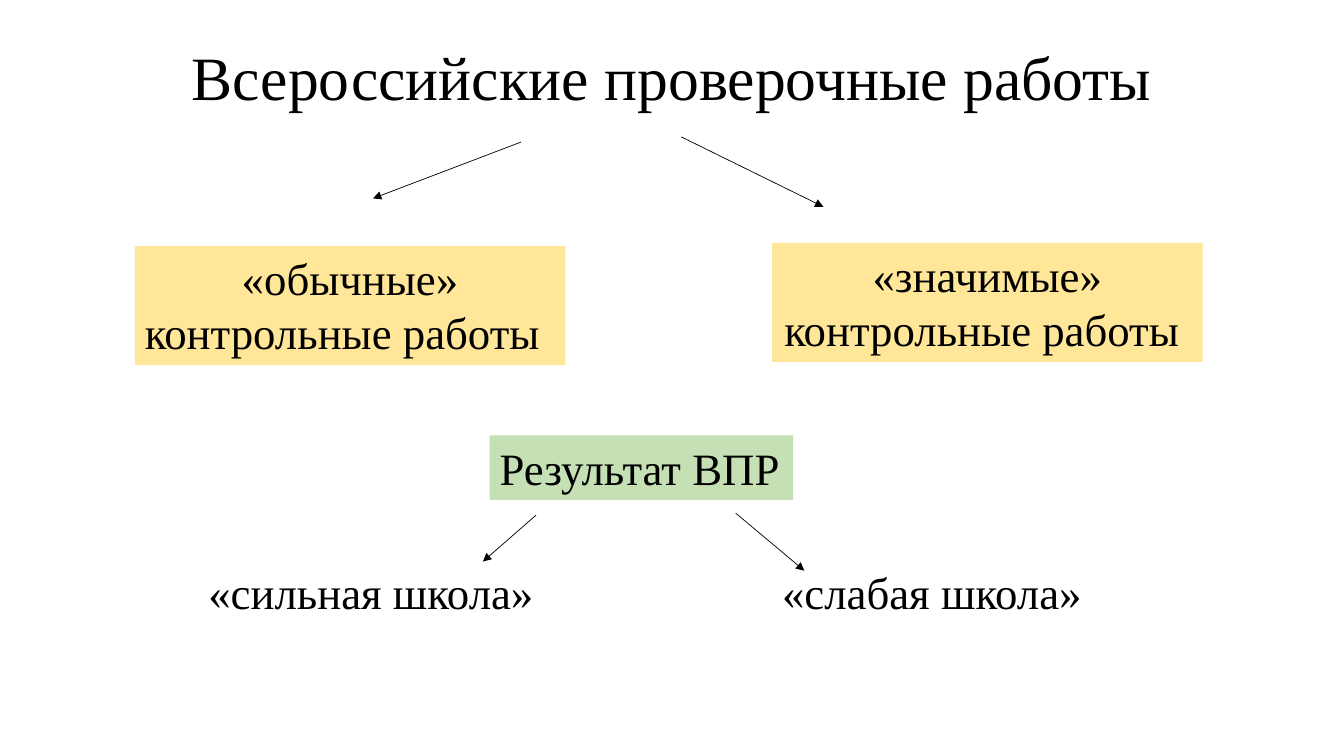
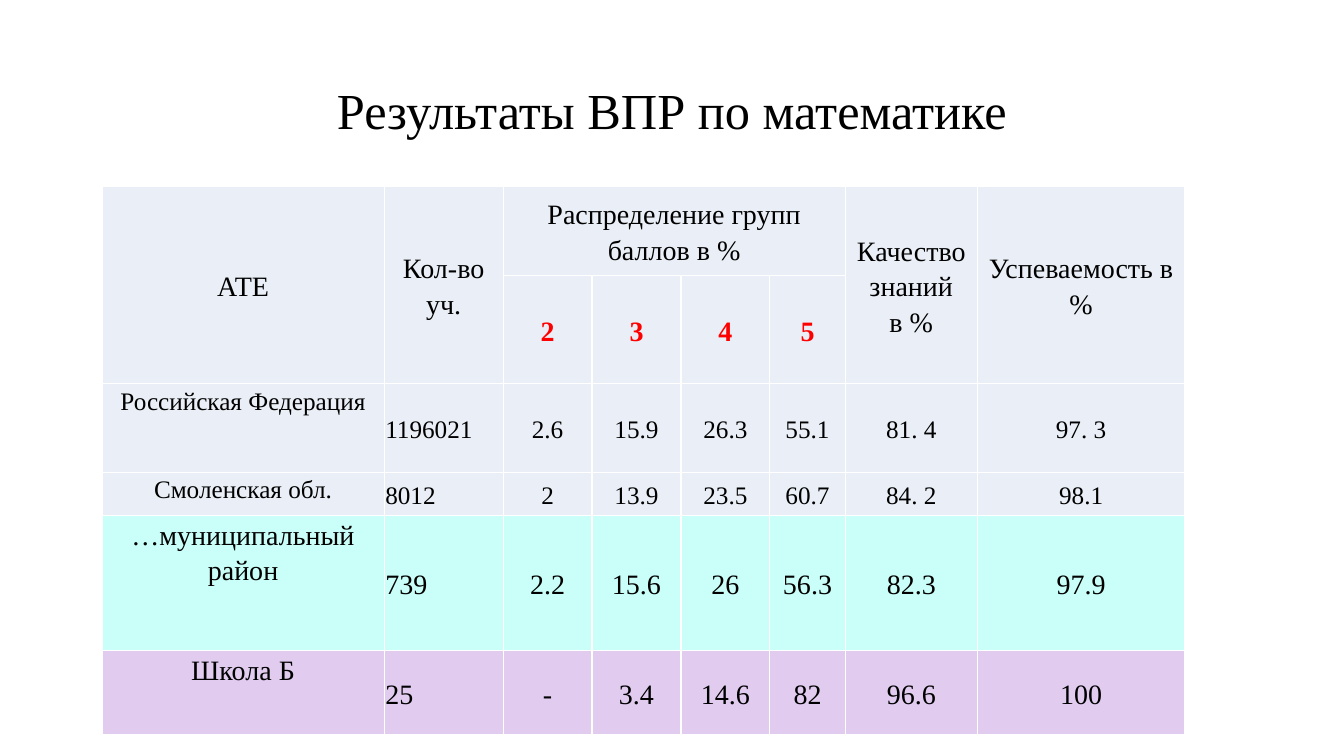
from lxml import etree
from pptx import Presentation
from pptx.dml.color import RGBColor
from pptx.enum.shapes import MSO_CONNECTOR, MSO_SHAPE
from pptx.enum.text import MSO_ANCHOR, PP_ALIGN
from pptx.oxml.ns import qn
from pptx.util import Cm, Pt

LEFT, CENTER = PP_ALIGN.LEFT, PP_ALIGN.CENTER
TOP, MIDDLE = MSO_ANCHOR.TOP, MSO_ANCHOR.MIDDLE
RECTANGLE, STRAIGHT = MSO_SHAPE.RECTANGLE, MSO_CONNECTOR.STRAIGHT

FONT = "Times New Roman"
COLORS = {
    "text": "000000",
    "mark": "FF0000",
    "border": "FFFFFF",
    "yellow": "FFE699",
    "green": "C5E0B4",
    "pale": "EAEFF7",
    "aqua": "CAFEF8",
    "lilac": "E1CCF0",
}

COLUMN_WIDTHS = [7.11, 3, 2.24, 2.24, 2.24, 1.9, 3.33, 5.23]
ROW_HEIGHTS = [2.24, 2.72, 2.24, 1.09, 3.4, 2.13]
# row, column, last row, last column, lines
HEADERS = [
    (0, 0, 1, 0, ["АТЕ"]),
    (0, 1, 1, 1, ["Кол-во уч."]),
    (0, 2, 0, 5, ["Распределение групп баллов в %"]),
    (0, 6, 1, 6, ["Качество знаний", "в %"]),
    (0, 7, 1, 7, ["Успеваемость в %"]),
]
MARKS = ["2", "3", "4", "5"]
# fill, text size, values
RESULTS = [
    ("pale", 18, ["Российская Федерация", "1196021", "2.6", "15.9", "26.3",
                  "55.1", "81. 4", "97. 3"]),
    ("pale", 18, ["Смоленская обл.", "8012", "2", "13.9", "23.5", "60.7",
                  "84. 2", "98.1"]),
    ("aqua", 20, ["…муниципальный район", "739", "2.2", "15.6", "26", "56.3",
                  "82.3", "97.9"]),
    ("lilac", 20, ["Школа Б", "25", "-", "3.4", "14.6", "82", "96.6", "100"]),
]


def rgb(name):
    return RGBColor.from_string(COLORS[name])


def write(tf, lines, size, aligns, color="text", bold=False, spacing=1.0):
    """Fill a text frame with one paragraph per line and alignment."""
    for i, (line, align) in enumerate(zip(lines, aligns)):
        p = tf.paragraphs[0] if i == 0 else tf.add_paragraph()
        p.alignment, p.line_spacing = align, spacing
        r = p.add_run()
        r.text = line
        r.font.name, r.font.size, r.font.bold = FONT, Pt(size), bold
        r.font.color.rgb = rgb(color)


def add_titled_slide(prs, title, size, height):
    s = prs.slides.add_slide(prs.slide_layouts[5])
    sp = s.shapes.title
    sp.left, sp.top, sp.width, sp.height = Cm(2.33), Cm(1.02), Cm(29.21), Cm(height)
    tf = sp.text_frame
    tf.word_wrap, tf.vertical_anchor = True, MIDDLE
    write(tf, [title], size, [CENTER], spacing=0.9)
    return s


def add_label(s, x, y, w, h, lines, aligns=(LEFT,), fill=None):
    """Add a plain text box, or a filled rectangle when fill is given."""
    box = Cm(x), Cm(y), Cm(w), Cm(h)
    if fill:
        sp = s.shapes.add_shape(RECTANGLE, *box)
        sp.shadow.inherit = False
        sp.fill.solid()
        sp.fill.fore_color.rgb = rgb(fill)
        sp.line.fill.background()
    else:
        sp = s.shapes.add_textbox(*box)
    tf = sp.text_frame
    tf.word_wrap, tf.vertical_anchor = True, TOP
    write(tf, lines, 32, aligns)


def add_arrow(s, x1, y1, x2, y2):
    arrow = s.shapes.add_connector(STRAIGHT, Cm(x1), Cm(y1), Cm(x2), Cm(y2))
    arrow.line.color.rgb = rgb("text")
    arrow.line.width = Pt(0.5)
    etree.SubElement(arrow.line._get_or_add_ln(), qn("a:tailEnd"), type="triangle")
    etree.SubElement(arrow._element.spPr, qn("a:effectLst"))


def format_cell(cell, fill):
    tc_pr = cell._tc.get_or_add_tcPr()
    for side in ("lnL", "lnR", "lnT", "lnB"):
        ln = etree.SubElement(tc_pr, qn(f"a:{side}"), w=str(Pt(1)))
        solid = etree.SubElement(ln, qn("a:solidFill"))
        etree.SubElement(solid, qn("a:srgbClr"), val=COLORS["border"])
    cell.fill.solid()
    cell.fill.fore_color.rgb = rgb(fill)
    cell.margin_left = cell.margin_right = Cm(0.03)
    cell.margin_top = cell.margin_bottom = 0
    cell.vertical_anchor = MIDDLE


def write_cell(cell, lines, size=20, align=CENTER, **style):
    write(cell.text_frame, lines, size, [align] * len(lines), spacing=1.15, **style)


def add_results_table(s):
    frame = s.shapes.add_table(
        len(ROW_HEIGHTS), len(COLUMN_WIDTHS), Cm(2.57), Cm(4.7),
        Cm(sum(COLUMN_WIDTHS)), Cm(sum(ROW_HEIGHTS)))
    table = frame.table
    table.first_row = table.horz_banding = False
    for column, width in zip(table.columns, COLUMN_WIDTHS):
        column.width = Cm(width)
    fills = ["pale", "pale"] + [fill for fill, _, _ in RESULTS]
    for row, height, fill in zip(table.rows, ROW_HEIGHTS, fills):
        row.height = Cm(height)
        for cell in row.cells:
            format_cell(cell, fill)

    for row, col, last_row, last_col, lines in HEADERS:
        cell = table.cell(row, col)
        cell.merge(table.cell(last_row, last_col))
        write_cell(cell, lines)
    for col, mark in enumerate(MARKS, 2):
        write_cell(table.cell(1, col), [mark], color="mark", bold=True)
    for row, (_, size, values) in enumerate(RESULTS, 2):
        for col, value in enumerate(values):
            write_cell(table.cell(row, col), [value], size,
                       LEFT if col == 1 else CENTER)
        table.cell(row, 0).vertical_anchor = TOP


def build_scheme_slide(prs):
    s = add_titled_slide(prs, "Всероссийские проверочные работы", 44, 2.03)
    add_label(s, 3.4, 6.2, 10.85, 3, ["«обычные»", "контрольные работы"],
              (CENTER, LEFT), "yellow")
    add_label(s, 19.46, 6.12, 10.85, 3, ["«значимые»", "контрольные работы "],
              (CENTER, CENTER), "yellow")
    add_label(s, 12.34, 10.97, 7.65, 1.63, ["Результат ВПР"], fill="green")
    add_label(s, 5, 14.1, 8.79, 1.63, ["«сильная школа»"])
    add_label(s, 19.46, 14.1, 8.13, 1.63, ["«слабая школа»"])
    for ends in [(13.13, 3.58, 9.4, 5), (17.17, 3.45, 20.75, 5.21),
                 (13.51, 12.98, 12.17, 14.15), (18.54, 12.93, 20.27, 14.38)]:
        add_arrow(s, *ends)


def build_results_slide(prs):
    s = add_titled_slide(prs, "Результаты ВПР по математике", 36, 3.68)
    add_results_table(s)


def main():
    prs = Presentation()
    prs.slide_width, prs.slide_height = Cm(33.87), Cm(19.05)
    build_scheme_slide(prs)
    build_results_slide(prs)
    prs.save("out.pptx")


if __name__ == "__main__":
    main()
